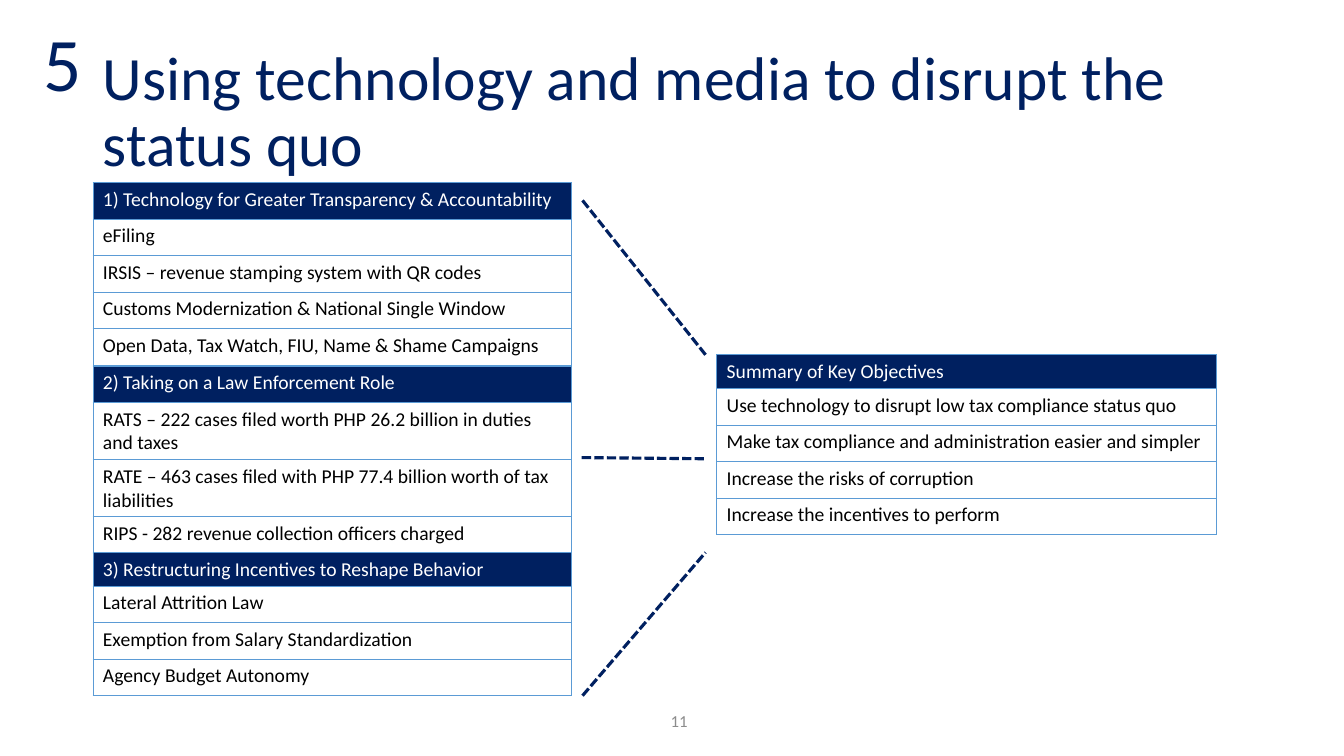
import pptx
import pptx.util
import pptx.oxml
import pptx.oxml.ns
from pptx.dml.color import RGBColor
from pptx.enum.dml import MSO_LINE
from pptx.enum.shapes import MSO_CONNECTOR
from pptx.enum.text import MSO_ANCHOR, MSO_AUTO_SIZE, PP_ALIGN
from pptx.util import Cm

NAVY = RGBColor(0x00, 0x20, 0x60)
BLUE = RGBColor(0x5B, 0x9B, 0xD5)
GREY = RGBColor(0x8C, 0x8C, 0x8C)
WHITE = RGBColor(0xFF, 0xFF, 0xFF)
BLACK = RGBColor(0x00, 0x00, 0x00)
ROW_HEIGHT = 0.92


def format_text(tf, size, color, align=PP_ALIGN.LEFT):
    for p in tf.paragraphs:
        p.alignment = align
        for r in p.runs:
            r.font.name = "Calibri"
            r.font.size = pptx.util.Pt(size)
            r.font.color.rgb = color


def add_borders(cell):
    """Draw a thin blue line on all four sides of a table cell."""
    tcPr = cell._tc.get_or_add_tcPr()
    for i, side in enumerate("LRTB"):
        tcPr.insert(i, pptx.oxml.parse_xml(
            f'<a:ln{side} {pptx.oxml.ns.nsdecls("a")} w="6350"><a:solidFill>'
            f'<a:srgbClr val="{BLUE}"/></a:solidFill></a:ln{side}>'))


prs = pptx.Presentation()
prs.slide_width, prs.slide_height = Cm(33.87), Cm(19.05)
s = prs.slides.add_slide(prs.slide_layouts[5])

# Title
title = s.shapes.title
title.left, title.top, title.width, title.height = Cm(2.34), Cm(1.02), Cm(29.21), Cm(3.68)
tf = title.text_frame
tf.text = "Using technology and media to disrupt the status quo"
tf.word_wrap = True
tf.auto_size = MSO_AUTO_SIZE.NONE
tf.vertical_anchor = MSO_ANCHOR.MIDDLE
tf.paragraphs[0].line_spacing = 0.9
format_text(tf, 44, NAVY)

# Section number
tf = s.shapes.add_textbox(Cm(0.83), Cm(0.28), Cm(1.5), Cm(2.57)).text_frame
tf.text = "5"
tf.word_wrap = False
tf.auto_size = MSO_AUTO_SIZE.SHAPE_TO_FIT_TEXT
format_text(tf, 54, NAVY, PP_ALIGN.CENTER)

# Tables: left, top, width, header height, rows with the header first
tables = [
    (2.34, 4.6, 12.07, ROW_HEIGHT, [
        "1) Technology for Greater Transparency & Accountability",
        "eFiling",
        "IRSIS – revenue stamping system with QR codes",
        "Customs Modernization & National Single Window",
        "Open Data, Tax Watch, FIU, Name & Shame Campaigns"]),
    (2.34, 9.22, 12.07, ROW_HEIGHT, [
        "2) Taking on a Law Enforcement Role",
        "RATS – 222 cases filed worth PHP 26.2 billion in duties and taxes",
        "RATE – 463 cases filed with PHP 77.4 billion worth of tax liabilities",
        "RIPS - 282 revenue collection officers charged"]),
    (2.34, 13.92, 12.07, 0.85, [
        "3) Restructuring Incentives to Reshape Behavior",
        "Lateral Attrition Law",
        "Exemption from Salary Standardization",
        "Agency Budget Autonomy"]),
    (18.06, 8.94, 12.6, 0.85, [
        "Summary of Key Objectives",
        "Use technology to disrupt low tax compliance status quo",
        "Make tax compliance and administration easier and simpler",
        "Increase the risks of corruption",
        "Increase the incentives to perform"]),
]
for left, top, width, header_height, rows in tables:
    height = header_height + ROW_HEIGHT * (len(rows) - 1)
    table = s.shapes.add_table(len(rows), 1, Cm(left), Cm(top), Cm(width), Cm(height)).table
    for i, text in enumerate(rows):
        is_header = i == 0
        table.rows[i].height = Cm(header_height if is_header else ROW_HEIGHT)
        cell = table.cell(i, 0)
        cell.text = text
        cell.fill.solid()
        cell.fill.fore_color.rgb = NAVY if is_header else WHITE
        format_text(cell.text_frame, 14, WHITE if is_header else BLACK)
        for r in cell.text_frame.paragraphs[0].runs:
            r.font.bold = False
        add_borders(cell)

# Dashed lines from the three topics to the summary
for x1, y1, x2, y2 in [(14.68, 5.05, 17.78, 8.94),
                       (14.68, 17.53, 17.78, 13.92),
                       (14.66, 11.53, 17.78, 11.56)]:
    line = s.shapes.add_connector(MSO_CONNECTOR.STRAIGHT, Cm(x1), Cm(y1), Cm(x2), Cm(y2))
    line.line.color.rgb = NAVY
    line.line.width = pptx.util.Pt(2.25)
    line.line.dash_style = MSO_LINE.SQUARE_DOT
    line._element.spPr.append(
        pptx.oxml.parse_xml(f'<a:effectLst {pptx.oxml.ns.nsdecls("a")}/>'))

# Page number
tf = s.shapes.add_textbox(Cm(9.96), Cm(17.65), Cm(7.62), Cm(1.02)).text_frame
tf.text = "11"
tf.word_wrap = True
tf.vertical_anchor = MSO_ANCHOR.MIDDLE
format_text(tf, 12, GREY, PP_ALIGN.RIGHT)

prs.save("out.pptx")
